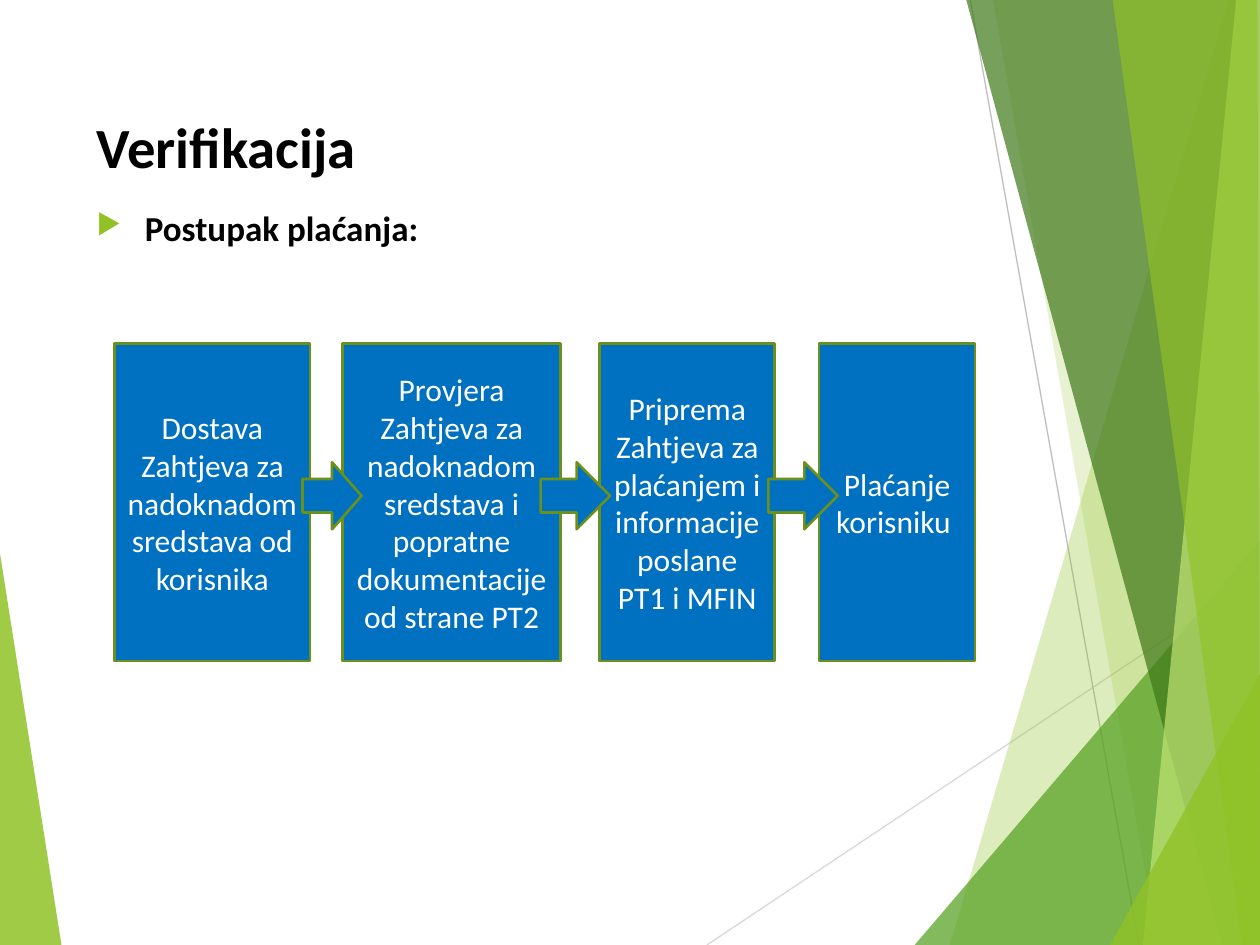
from typing import NamedTuple

from lxml.etree import SubElement
from pptx import Presentation
from pptx.dml.color import RGBColor as Rgb
from pptx.enum.shapes import MSO_CONNECTOR as Connector, MSO_SHAPE as Preset
from pptx.enum.text import MSO_ANCHOR as Anchor, PP_ALIGN as Align
from pptx.oxml.ns import qn
from pptx.util import Cm, Pt

COLORS = {
    "lime": "90C226", "green": "54A021", "forest": "3F7819", "pale": "C0E474",
    "rule_light": "D9D9D9", "rule_dark": "BFBFBF",
    "step": "0070C0", "edge": "6B901C", "black": "000000", "white": "FFFFFF",
}
WIDTH, HEIGHT = 25.4, 19.05
STEP_TOP, STEP_HEIGHT = 6.93, 6.4
ARROW_TOP, ARROW_HEIGHT = 9.32, 1.35

TITLE_FONT = {"name": "Calibri", "size": Pt(32.4), "bold": True}
HEADING_FONT = {"name": "Calibri", "size": Pt(20), "bold": True}
STEP_FONT = {"name": "Calibri", "size": Pt(18)}


class Panel(NamedTuple):
    color: str
    opacity: int
    corners: tuple


class Rule(NamedTuple):
    color: str
    start: tuple
    end: tuple


class Step(NamedTuple):
    left: float
    width: float
    text: str


class Arrow(NamedTuple):
    left: float
    width: float


LEFT_PANEL = Panel("lime", 85, ((0, 11.15), (1.24, HEIGHT), (0, HEIGHT)))
RULES = (
    Rule("rule_light", (14.25, HEIGHT), (WIDTH, 11.61)),
    Rule("rule_dark", (19.56, 0), (22.96, HEIGHT)),
)
RIGHT_PANELS = (
    Panel("lime", 30, ((24.77, 0), (19.15, HEIGHT), (WIDTH, HEIGHT), (WIDTH, 0))),
    Panel("lime", 20, ((20.02, 0), (23.34, HEIGHT), (WIDTH, HEIGHT), (WIDTH, 0))),
    Panel("green", 72, ((18.44, HEIGHT), (WIDTH, 10.9), (WIDTH, HEIGHT))),
    Panel("forest", 70, ((19.48, 0), (24.64, HEIGHT), (WIDTH, HEIGHT), (WIDTH, 0))),
    Panel("pale", 70, ((24.92, 0), (23.04, HEIGHT), (WIDTH, HEIGHT), (WIDTH, 0))),
    Panel("lime", 65, ((22.43, 0), (25.04, HEIGHT), (WIDTH, HEIGHT), (25.35, 0))),
    Panel("lime", 80, ((22.38, HEIGHT), (WIDTH, 13.59), (WIDTH, HEIGHT))),
)
STEPS = (
    Step(2.31, 3.94, "Dostava Zahtjeva za nadoknadom sredstava od korisnika"),
    Step(6.91, 4.39, "Provjera Zahtjeva za nadoknadom sredstava i popratne "
                     "dokumentacije od strane PT2"),
    Step(12.09, 3.53, "Priprema Zahtjeva za plaćanjem i informacije poslane PT1 i MFIN"),
    Step(16.51, 3.15, "Plaćanje korisniku "),
)
ARROWS = (Arrow(6.1, 1.19), Arrow(10.9, 1.4), Arrow(15.49, 1.4))


def rgb(color: str) -> Rgb:
    return Rgb.from_string(COLORS[color])


def style_font(paragraph, values: dict, color: str) -> None:
    font = paragraph.runs[0].font
    for name, value in values.items():
        setattr(font, name, value)
    font.color.rgb = rgb(color)


def draw_panel(shapes, panel: Panel) -> None:
    first, *others = [(Cm(x), Cm(y)) for x, y in panel.corners]
    builder = shapes.build_freeform(*first)
    builder.add_line_segments(others, close=True)
    facet = builder.convert_to_shape()
    facet.shadow.inherit = False
    facet.line.fill.background()
    facet.fill.solid()
    facet.fill.fore_color.rgb = rgb(panel.color)
    tint = facet.fill._xPr.find(qn("a:solidFill"))[0]
    SubElement(tint, qn("a:alpha"), val=str(panel.opacity * 1000))


def draw_rule(shapes, rule: Rule) -> None:
    ends = [Cm(value) for value in rule.start + rule.end]
    thread = shapes.add_connector(Connector.STRAIGHT, *ends)
    thread.line.color.rgb = rgb(rule.color)
    thread.line.width = Pt(0.75)
    SubElement(thread._element.spPr, qn("a:effectLst"))


def draw_block(shapes, preset: Preset, left: float, top: float,
               width: float, height: float):
    block = shapes.add_shape(preset, Cm(left), Cm(top), Cm(width), Cm(height))
    block.shadow.inherit = False
    block.fill.solid()
    block.fill.fore_color.rgb = rgb("step")
    block.line.color.rgb = rgb("edge")
    block.line.width = Pt(1.5)
    return block


def draw_step(shapes, step: Step) -> None:
    block = draw_block(shapes, Preset.RECTANGLE, step.left, STEP_TOP,
                       step.width, STEP_HEIGHT)
    frame = block.text_frame
    frame.word_wrap = True
    frame.vertical_anchor = Anchor.MIDDLE
    label = frame.paragraphs[0]
    label.text = step.text
    label.alignment = Align.CENTER
    style_font(label, STEP_FONT, "white")


def add_text(shapes, top: float, height: float, text: str, values: dict):
    box = shapes.add_textbox(Cm(1.7), Cm(top), Cm(18.31), Cm(height))
    box.text_frame.word_wrap = True
    paragraph = box.text_frame.paragraphs[0]
    paragraph.text = text
    style_font(paragraph, values, "black")
    return paragraph


def add_bullet(paragraph) -> None:
    props = paragraph._p.get_or_add_pPr()
    props.set("marL", str(Cm(0.97)))
    props.set("indent", str(-Cm(0.97)))
    tint = SubElement(props, qn("a:buClr"))
    SubElement(tint, qn("a:srgbClr"), val=COLORS["lime"])
    SubElement(props, qn("a:buSzPct"), val="80000")
    SubElement(props, qn("a:buChar"), char="▶")


def main() -> None:
    deck = Presentation()
    deck.slide_width, deck.slide_height = Cm(WIDTH), Cm(HEIGHT)
    shapes = deck.slides.add_slide(deck.slide_layouts[6]).shapes

    # Faceted background
    draw_panel(shapes, LEFT_PANEL)
    for rule in RULES:
        draw_rule(shapes, rule)
    for panel in RIGHT_PANELS:
        draw_panel(shapes, panel)

    # Title and heading
    add_text(shapes, 2.13, 1.6, "Verifikacija", TITLE_FONT)
    heading = add_text(shapes, 4.04, 1.2, "Postupak plaćanja:", HEADING_FONT)
    add_bullet(heading)

    # Payment procedure
    for step in STEPS:
        draw_step(shapes, step)
    for arrow in ARROWS:
        draw_block(shapes, Preset.RIGHT_ARROW, arrow.left, ARROW_TOP,
                   arrow.width, ARROW_HEIGHT)

    deck.save("out.pptx")


if __name__ == "__main__":
    main()
